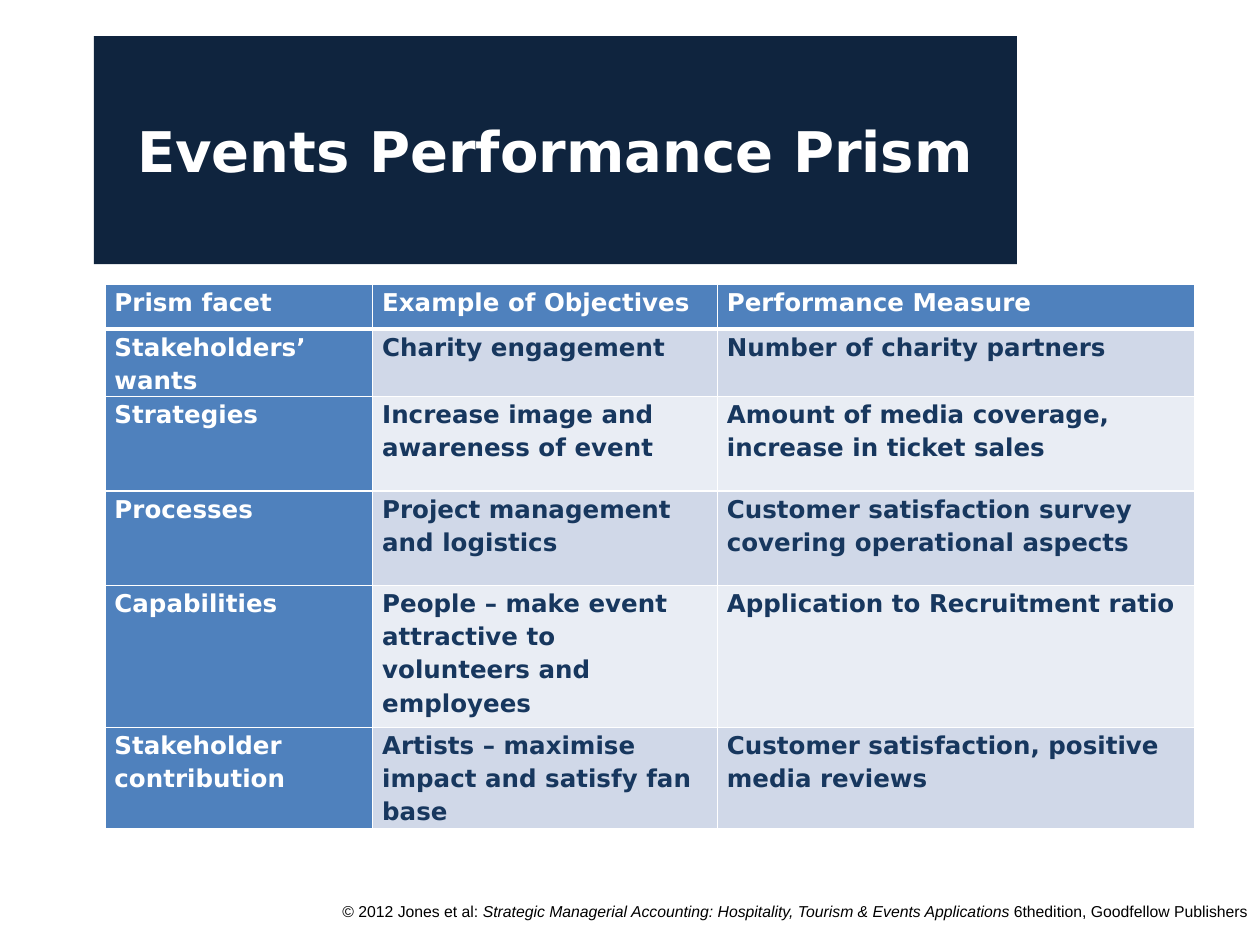
from dataclasses import dataclass

from lxml import etree
from pptx import Presentation
from pptx.dml.color import RGBColor
from pptx.enum.text import MSO_ANCHOR, PP_ALIGN
from pptx.oxml.ns import qn
from pptx.util import Pt

CENTER, RIGHT = PP_ALIGN.CENTER, PP_ALIGN.RIGHT
TOP, MIDDLE = MSO_ANCHOR.TOP, MSO_ANCHOR.MIDDLE


@dataclass(frozen=True)
class Theme:
    heading_font: str = "DejaVu Sans"
    footer_font: str = "Arial"
    title_size: float = 32
    table_size: float = 14
    footer_size: float = 9
    navy: str = "0F243E"
    blue: str = "4F81BD"
    ink: str = "17375E"
    bands: tuple = ("D0D8E8", "E9EDF4")
    white: str = "FFFFFF"
    black: str = "000000"


class PageBuilder:
    """Draws elements on one page in one theme; lengths are in points."""

    def __init__(self, page, theme):
        self.page = page
        self.theme = theme

    def style(self, para, font, size, color, bold=False):
        para.font.name = font
        para.font.size = Pt(size)
        para.font.bold = bold
        para.font.color.rgb = RGBColor.from_string(color)

    def title(self, text, left, top, width, height):
        box = self.page.shapes.title
        box.left, box.top, box.width, box.height = map(Pt, (left, top, width, height))
        box.fill.solid()
        box.fill.fore_color.rgb = RGBColor.from_string(self.theme.navy)
        frame = box.text_frame
        frame.text = text
        frame.vertical_anchor = MIDDLE
        para = frame.paragraphs[0]
        para.alignment = CENTER
        self.style(para, self.theme.heading_font, self.theme.title_size,
                   self.theme.white, bold=True)

    def footer(self, spans, left, top, width, height):
        box = self.page.shapes.add_textbox(*map(Pt, (left, top, width, height)))
        box.text_frame.word_wrap = True
        para = box.text_frame.paragraphs[0]
        para.alignment = RIGHT
        self.style(para, self.theme.footer_font, self.theme.footer_size, self.theme.black)
        for text, italic in spans:
            span = para.add_run()
            span.text = text
            span.font.italic = italic

    def borders(self, cell, top, bottom):
        properties = cell._tc.get_or_add_tcPr()
        for side, weight in (("L", 1), ("R", 1), ("T", top), ("B", bottom)):
            line = etree.SubElement(properties, qn(f"a:ln{side}"), w=str(Pt(weight)))
            fill = etree.SubElement(line, qn("a:solidFill"))
            etree.SubElement(fill, qn("a:srgbClr"), val=self.theme.white)

    def cell(self, cell, text, fill, color):
        cell.margin_left = cell.margin_right = Pt(5.4)
        cell.margin_top = cell.margin_bottom = 0
        cell.vertical_anchor = TOP
        cell.fill.solid()
        cell.fill.fore_color.rgb = RGBColor.from_string(fill)
        cell.text = text
        para = cell.text_frame.paragraphs[0]
        para.line_spacing = 1.15
        self.style(para, self.theme.heading_font, self.theme.table_size, color, bold=True)

    def table(self, rows, left, top, widths, heights):
        frame = self.page.shapes.add_table(
            len(rows), len(widths), Pt(left), Pt(top), Pt(sum(widths)), Pt(sum(heights)))
        table = frame.table
        table.first_col = True
        for column, width in zip(table.columns, widths):
            column.width = Pt(width)
        for i, (texts, height) in enumerate(zip(rows, heights)):
            table.rows[i].height = Pt(height)
            for j, text in enumerate(texts):
                cell = table.cell(i, j)
                # A heavier rule separates the header from the body
                self.borders(cell, top=3 if i == 1 else 1, bottom=3 if i == 0 else 1)
                if i == 0 or j == 0:
                    self.cell(cell, text, self.theme.blue, self.theme.white)
                else:
                    self.cell(cell, text, self.theme.bands[(i - 1) % 2], self.theme.ink)


PRISM_ROWS = [
    ("Prism facet", "Example of Objectives", "Performance Measure"),
    ("Stakeholders’ wants", "Charity engagement", "Number of charity partners"),
    ("Strategies", "Increase image and awareness of event",
     "Amount of media coverage, increase in ticket sales"),
    ("Processes", "Project management and logistics",
     "Customer satisfaction survey covering operational aspects"),
    ("Capabilities", "People – make event attractive to volunteers and employees",
     "Application to Recruitment ratio"),
    ("Stakeholder contribution", "Artists – maximise impact and satisfy fan base",
     "Customer satisfaction, positive media reviews"),
]

COPYRIGHT = [
    ("© 2012 Jones et al: ", False),
    ("Strategic Managerial Accounting: Hospitality, Tourism & Events Applications ", True),
    ("6thedition, Goodfellow Publishers", False),
]


def main():
    deck = Presentation()
    deck.slide_width, deck.slide_height = Pt(720), Pt(540)
    page = deck.slides.add_slide(deck.slide_layouts[0])
    subtitle = page.placeholders[1].element
    subtitle.getparent().remove(subtitle)
    builder = PageBuilder(page, Theme())

    # Copyright line
    builder.footer(COPYRIGHT, 160.5, 512, 559.5, 28)

    # Title banner
    builder.title("Events Performance Prism", 53.7, 20.6, 527.4, 130.3)

    # Facets, objectives and measures
    builder.table(PRISM_ROWS, 60, 162.5, widths=(153, 197, 273),
                  heights=(25.5, 26, 54, 54, 81, 54))

    deck.save("out.pptx")


if __name__ == "__main__":
    main()
